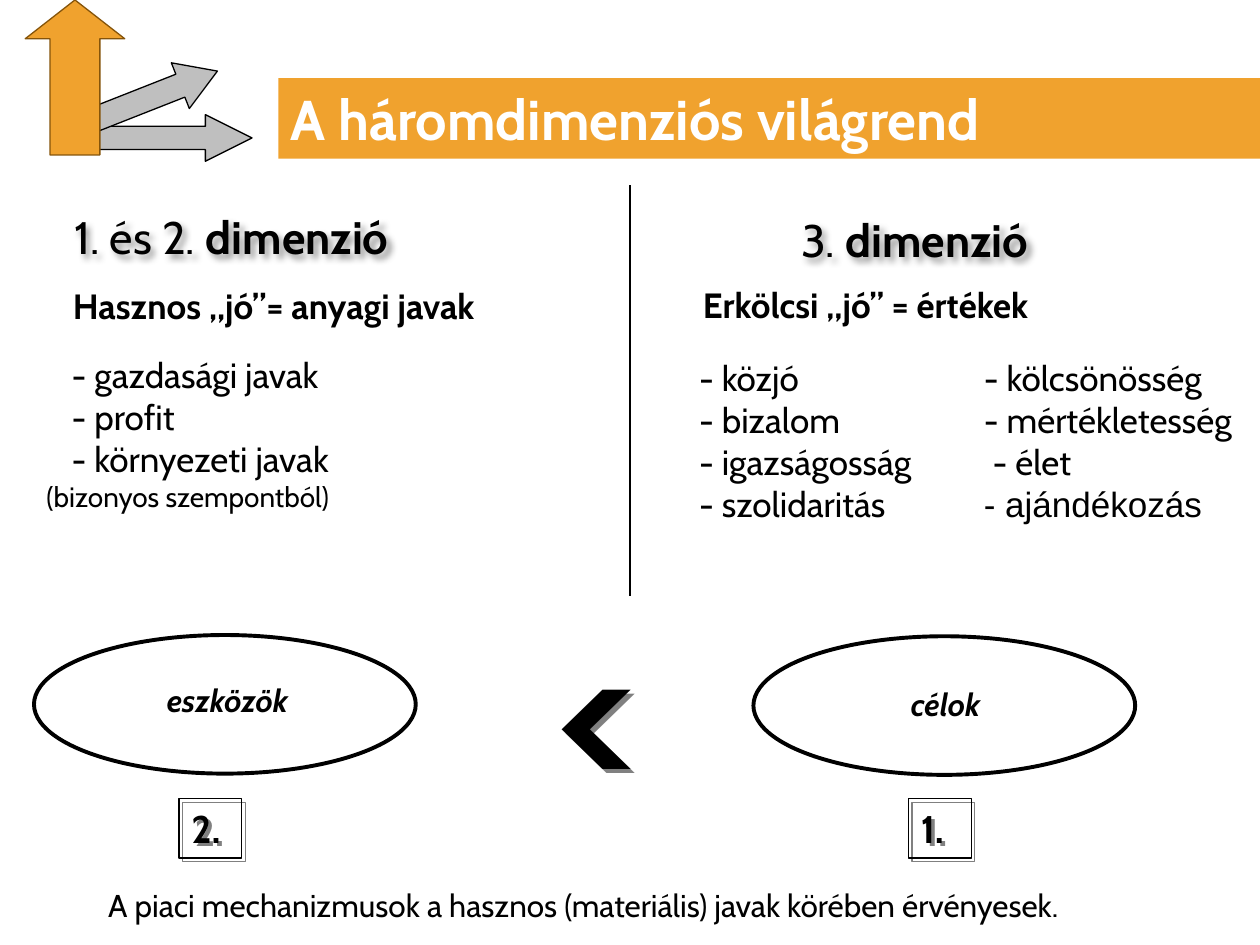
from dataclasses import dataclass
from lxml.etree import SubElement
from pptx import Presentation
from pptx.dml.color import RGBColor
from pptx.enum.shapes import MSO_CONNECTOR as Connector, MSO_SHAPE as Preset
from pptx.enum.text import MSO_ANCHOR as Anchor, PP_ALIGN as Align
from pptx.oxml.ns import qn
from pptx.util import Inches, Pt


@dataclass(frozen=True)
class Theme:
    font: str = "Cabin"
    alt_font: str = "Arial"
    black: str = "000000"
    white: str = "FFFFFF"
    orange: str = "F0A22E"
    brown: str = "85540A"
    gray: str = "BFBFBF"
    shade: str = "808080"
    title: int = 32
    heading: int = 26
    rank: int = 22
    body: int = 20
    label: int = 18
    note: int = 16
    sign: int = 110


theme = Theme()
HARD = dict(color=theme.shade, blur=0, distance=2.8, angle=45, opacity=100)
SOFT = dict(color=theme.black, blur=4, distance=3, angle=50, opacity=40)

TITLE = "A háromdimenziós világrend"
HEADINGS = [
    ((0.49, 1.61, 3.1, 0.54), "1. és 2. "),
    ((6.26, 1.63, 2.76, 0.54), "3. "),
]
HEADING_WORD = "dimenzió"
SUBHEADINGS = [
    ((0.48, 2.21, 3.79, 0.44), "Hasznos „jó”= anyagi javak"),
    ((5.48, 2.2, 3.24, 0.44), "Erkölcsi „jó” = értékek"),
]
MATERIAL_GOODS = [
    ("- gazdasági javak", dict(indent=0.2)),
    ("- profit", dict(indent=0.2)),
    ("- környezeti javak", dict(indent=0.2)),
    ("(bizonyos szempontból)", dict(size=theme.note)),
]
VALUES_LEFT = [(text, {}) for text in
               ("- közjó", "- bizalom", "- igazságosság", "- szolidaritás")]
VALUES_RIGHT = [
    ("- kölcsönösség", {}),
    ("- mértékletesség", {}),
    ("- élet", dict(indent=0.07)),
    ("- ajándékozás", dict(font=theme.alt_font)),
]
LISTS = [
    ((0.27, 2.76, 3.75, 1.4), MATERIAL_GOODS),
    ((5.45, 2.78, 2.2, 1.45), VALUES_LEFT),
    ((7.71, 2.78, 2.29, 1.45), VALUES_RIGHT),
]
ELLIPSES = [(0.27, 5.04, 3.03, 1.1), (5.98, 5.05, 3.03, 1.1)]
LABELS = [((1.16, 5.36, 1.29, 0.4), "eszközök"), ((7.09, 5.39, 0.83, 0.4), "célok")]
RANKS = [((1.42, 6.34, 0.5, 0.47), "2."), ((7.21, 6.34, 0.5, 0.47), "1.")]
ARROWS = [
    (Preset.RIGHT_ARROW, (0.51, 0.91, 1.49, 0.37), 1.0, 0, theme.gray, theme.black),
    (Preset.RIGHT_ARROW, (0.51, 0.6, 1.26, 0.39), 0.81, 338.5, theme.gray, theme.black),
    (Preset.UP_ARROW, (0.2, 0, 0.79, 1.23), 0.39, 0, theme.orange, theme.brown),
]
CONCLUSION = "A piaci mechanizmusok a hasznos (materiális) javak körében érvényesek."

deck = Presentation()
deck.slide_width, deck.slide_height = Inches(10), Inches(7.5)
page = deck.slides.add_slide(deck.slide_layouts[6])


def place(area):
    return [Inches(value) for value in area]


def add_shadow(shape, color, blur, distance, angle, opacity):
    shape.shadow.inherit = False
    effects = shape._element.spPr.find(qn("a:effectLst"))
    outer = SubElement(effects, qn("a:outerShdw"), blurRad=str(Pt(blur)),
                       dist=str(Pt(distance)), dir=str(angle * 60000),
                       algn="tl", rotWithShape="0")
    shade = SubElement(outer, qn("a:srgbClr"), val=color)
    SubElement(shade, qn("a:alpha"), val=str(opacity * 1000))


def add_shape(preset, area, fill=None, line=None, width=0.75):
    shape = page.shapes.add_shape(preset, *place(area))
    shape.shadow.inherit = False
    if fill:
        shape.fill.solid()
        shape.fill.fore_color.rgb = RGBColor.from_string(fill)
    else:
        shape.fill.background()
    if line:
        shape.line.color.rgb = RGBColor.from_string(line)
        shape.line.width = Pt(width)
    else:
        shape.line.fill.background()
    return shape


def add_box(area):
    return page.shapes.add_textbox(*place(area))


def write(para, text, size=theme.body, font=theme.font, color=theme.black,
          bold=False, italic=False, align=Align.LEFT, indent=0):
    para.alignment = align
    if indent:
        para._p.get_or_add_pPr().set("marL", str(Inches(indent)))
    span = para.add_run()
    span.text = text
    span.font.size, span.font.name = Pt(size), font
    span.font.bold, span.font.italic = bold, italic
    span.font.color.rgb = RGBColor.from_string(color)


def write_first(shape, text, wrap=False, **style):
    frame = shape.text_frame
    frame.word_wrap = wrap
    frame.vertical_anchor = Anchor.TOP
    write(frame.paragraphs[0], text, **style)
    return frame.paragraphs[0]


for area, items in LISTS:
    frame = add_box(area).text_frame
    frame.word_wrap = True
    for index, (text, style) in enumerate(items):
        para = frame.add_paragraph() if index else frame.paragraphs[0]
        write(para, text, **style)

for area in ELLIPSES:
    add_shape(Preset.OVAL, area, line=theme.black, width=2.25)

sign = add_box((4.32, 4.65, 1.02, 1.95))
write_first(sign, "<", wrap=True, size=theme.sign, bold=True)
add_shadow(sign, **HARD)

for area, text in RANKS:
    square = add_shape(Preset.RECTANGLE, area, line=theme.black)
    write_first(square, text, size=theme.rank, bold=True)
    add_shadow(square, **HARD)

for area, number in HEADINGS:
    heading = add_box(area)
    para = write_first(heading, number, size=theme.heading)
    write(para, HEADING_WORD, size=theme.heading, bold=True)
    add_shadow(heading, **SOFT)

for area, text in SUBHEADINGS:
    write_first(add_box(area), text, bold=True)

for area, text in LABELS:
    write_first(add_box(area), text, size=theme.label, bold=True, italic=True,
                align=Align.CENTER)

divider = page.shapes.add_connector(Connector.STRAIGHT, *place((5, 1.47, 5, 4.73)))
divider.line.color.rgb = RGBColor.from_string(theme.black)
divider.line.width = Pt(1)
SubElement(divider._element.spPr, qn("a:effectLst"))

for preset, area, head, rotation, fill, line in ARROWS:
    arrow = add_shape(preset, area, fill=fill, line=line)
    arrow.adjustments[0], arrow.adjustments[1] = 0.5, head
    arrow.rotation = rotation

write_first(add_box((0.76, 6.98, 8.48, 0.4)), CONCLUSION, size=theme.label)
banner = add_shape(Preset.RECTANGLE, (2.21, 0.62, 7.79, 0.64), fill=theme.orange)
write_first(banner, TITLE, wrap=True, size=theme.title, color=theme.white, bold=True)

deck.save("out.pptx")
